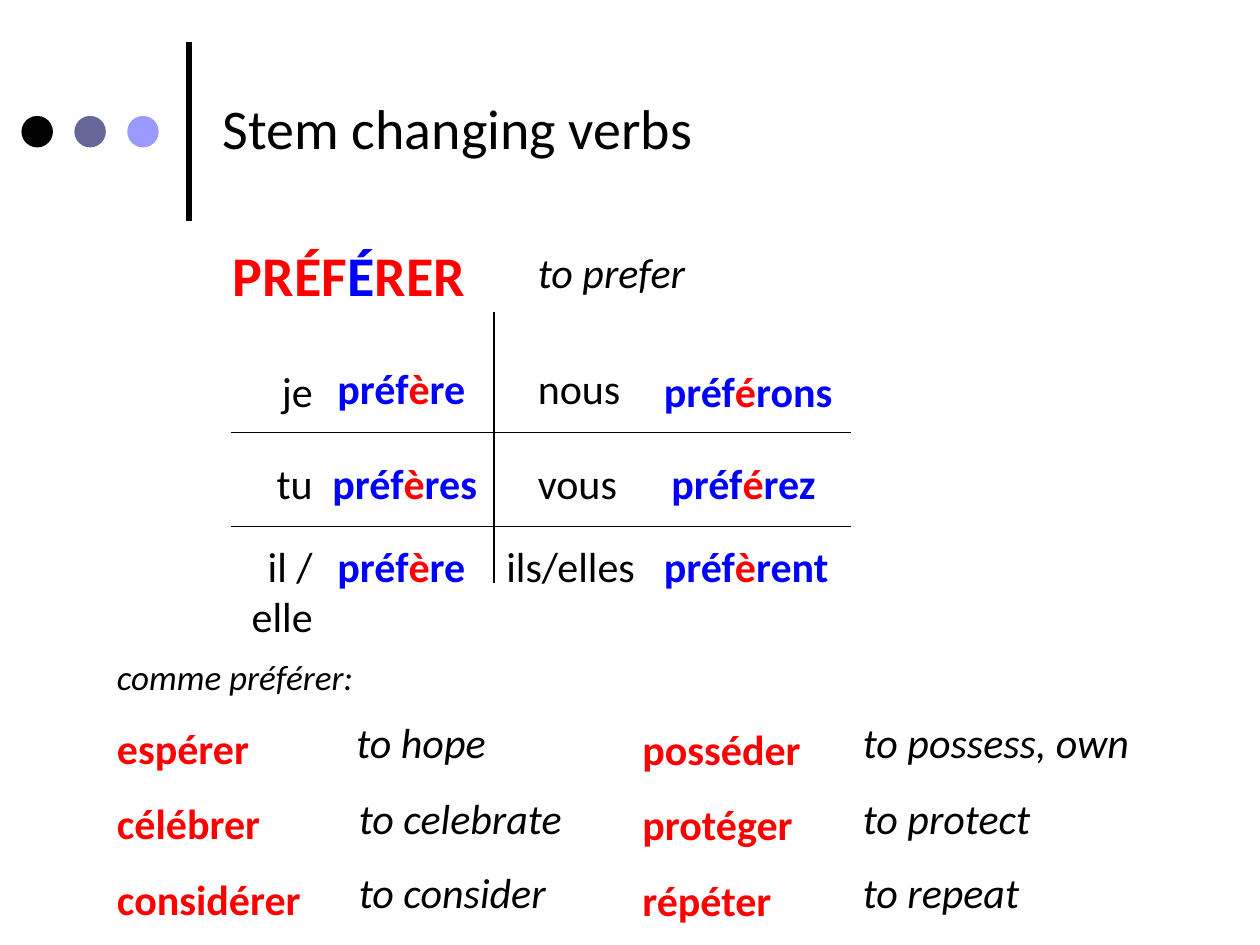
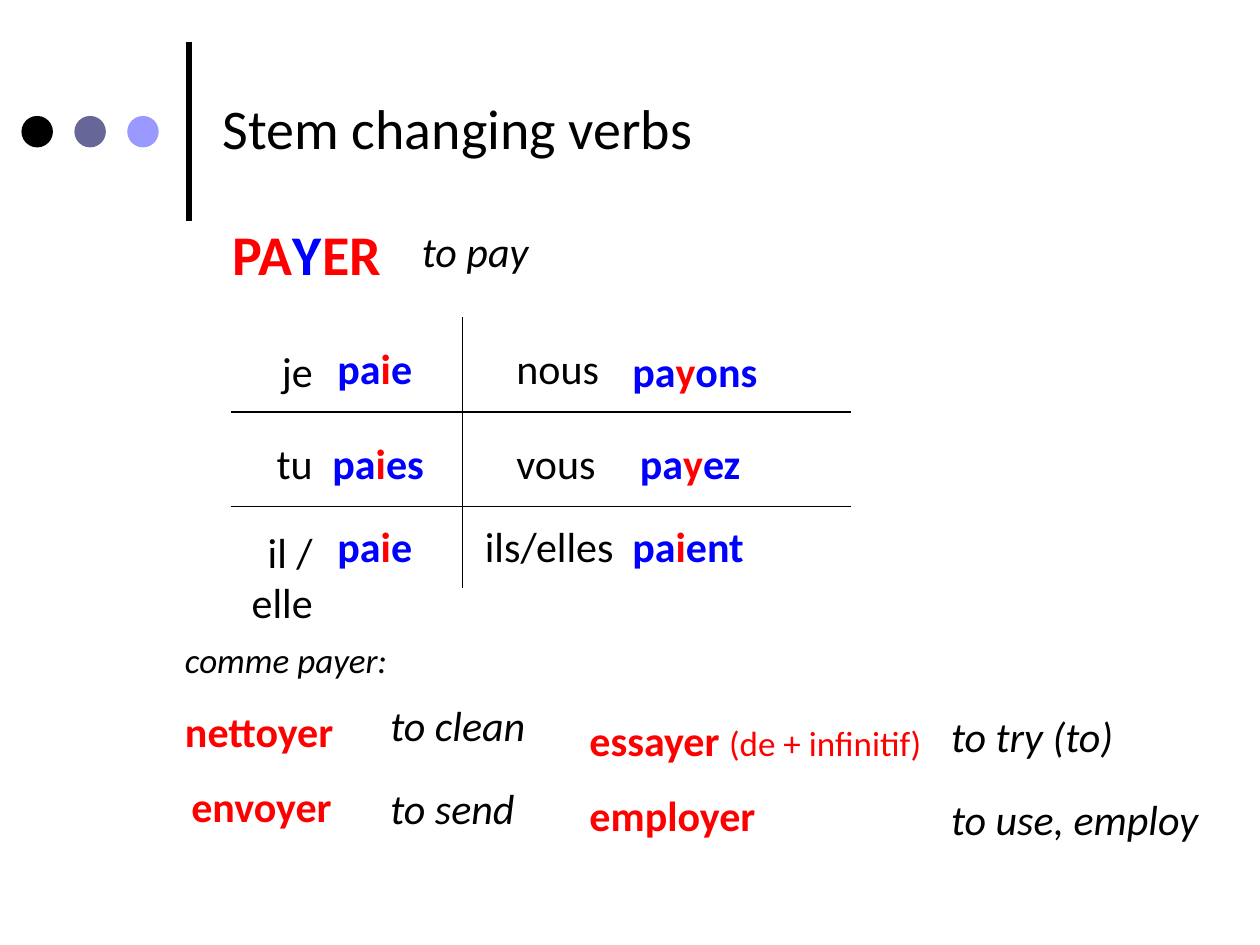
import pptx
import pptx.util
import pptx.dml.color
import pptx.enum.shapes
import pptx.enum.text
import pptx.oxml.ns
from lxml import etree

Inches, Pt = pptx.util.Inches, pptx.util.Pt
RIGHT = pptx.enum.text.PP_ALIGN.RIGHT

COLORS = {"black": "000000", "slate": "666699", "lilac": "9999FF",
          "red": "FF0000", "blue": "0000FF", "white": "FFFFFF"}
FONT = "Calibri"


def rgb(name):
    return pptx.dml.color.RGBColor.from_string(COLORS[name])


def add_line(s, x1, y1, x2, y2, weight):
    line = s.shapes.add_connector(
        pptx.enum.shapes.MSO_CONNECTOR.STRAIGHT,
        Inches(x1), Inches(y1), Inches(x2), Inches(y2))
    line.line.color.rgb = rgb("black")
    line.line.width = Pt(weight)
    etree.SubElement(line._element.spPr, pptx.oxml.ns.qn("a:effectLst"))


def add_box(s, x, y, w, h=0.51):
    tf = s.shapes.add_textbox(Inches(x), Inches(y), Inches(w), Inches(h)).text_frame
    tf.word_wrap = True
    tf.auto_size = pptx.enum.text.MSO_AUTO_SIZE.SHAPE_TO_FIT_TEXT
    return tf


def style(p, size=24, color="black", bold=False, italic=False):
    p.font.name, p.font.size = FONT, Pt(size)
    p.font.bold, p.font.italic = bold, italic
    p.font.color.rgb = rgb(color)


def add_text(s, x, y, w, text, align=None, **look):
    p = add_box(s, x, y, w).paragraphs[0]
    p.text = text
    p.alignment = align
    style(p, **look)


def add_marked(s, x, y, w, text, base, mark, size=24):
    """Write a word whose *starred* letter takes the mark colour."""
    p = add_box(s, x, y, w).paragraphs[0]
    style(p, size, base, bold=True)
    for i, part in enumerate(text.split("*")):
        r = p.add_run()
        r.text = part
        r.font.color.rgb = rgb(mark if i % 2 else base)


# Dots, bar and title shared by both slides
def add_header(s, title):
    s.background.fill.solid()
    s.background.fill.fore_color.rgb = rgb("white")
    add_line(s, 1.5, 1.75, 1.5, 0.33, 3)
    for i, color in enumerate(("black", "slate", "lilac")):
        dot = s.shapes.add_shape(
            pptx.enum.shapes.MSO_SHAPE.OVAL,
            Inches(0.17 + 0.42 * i), Inches(0.92), Inches(0.25), Inches(0.25))
        dot.shadow.inherit = False
        dot.fill.solid()
        dot.fill.fore_color.rgb = rgb(color)
        dot.line.fill.background()
    add_text(s, 1.67, 0.69, 5.17, title, size=32)


# Infinitive with its meaning
def add_infinitive(s, x, y, verb, meaning, meaning_x):
    add_marked(s, x, y, 2.62, verb, "red", "blue", size=32)
    add_text(s, meaning_x, y + 0.05, 2.08, meaning, italic=True)


# Six forms around a cross of thin lines
def add_conjugation(s, x, y, singular, plural, divider, plural_x, form_x, elle_drop=0):
    for rule_y in (y + 0.6, y + 1.35):
        add_line(s, x + 0.33, rule_y, x + 5.25, rule_y, 0.75)
    divider_x, divider_y = divider
    add_line(s, divider_x, divider_y, divider_x, divider_y + 2.15, 0.75)

    row_y = [y, y + 0.75, y + 1.41]
    drops = [0.02, 0, elle_drop]
    for pronoun, ry, drop in zip(("je", "tu", "il / elle"), row_y, drops):
        add_text(s, x, ry + drop, 1.08, pronoun, align=RIGHT)
    for form, ry, dx in zip(singular, row_y, (0, -0.04, 0)):
        add_marked(s, x + 1.08 + dx, ry, 1.62, form, "blue", "red")
    for pronoun, ry, dx in zip(("nous", "vous", "ils/elles"), row_y, (0, 0, -0.25)):
        add_text(s, plural_x + dx, ry, 1.33, pronoun)
    for form, ry, dx, drop in zip(plural, row_y, (0, 0.06, 0), (0.02, 0, 0)):
        add_marked(s, form_x + dx, ry, 2.08, form, "blue", "red")if not drop else \
            add_marked(s, form_x + dx, ry + drop, 2.08, form, "blue", "red")


# Column of verbs that follow the same pattern
def add_verbs(s, x, y, w, h, verbs, intro=None, tight_last=False):
    tf = add_box(s, x, y, w, h)
    p = tf.paragraphs[0]
    if intro:
        p.text = intro
        style(p, 20, italic=True)
        p = tf.add_paragraph()
    for i, (verb, note) in enumerate(verbs):
        if i:
            p = tf.add_paragraph()
        style(p, color="red", bold=True)
        p.line_spacing = 1.5
        r = p.add_run()
        r.text = verb
        if note:
            r.text = verb + " "
            r = p.add_run()
            r.text = note
            r.font.size, r.font.bold = Pt(20), False
    if tight_last:
        p.line_spacing = 1.0
        p.space_before = Pt(14)
        p._p.get_or_add_pPr().set("marL", str(Inches(0.05)))


def add_meanings(s, x, ys, meanings):
    for y, meaning in zip(ys, meanings):
        add_text(s, x, y, 2.47, meaning, italic=True)


def build_preferer(prs):
    s = prs.slides.add_slide(prs.slide_layouts[6])
    add_header(s, "Stem changing verbs")
    add_infinitive(s, 1.75, 1.86, "PRÉF*É*RER", "to prefer", 4.17)
    add_conjugation(s, 1.5, 2.83,
                    ("préf*è*re", "préf*è*res", "préf*è*re"),
                    ("préf*é*rons", "préf*é*rez", "préf*è*rent"),
                    divider=(3.92, 2.48), plural_x=4.17, form_x=5.17)
    add_verbs(s, 0.83, 5.15, 2.47, 2.19,
              [("espérer", ""), ("célébrer", ""), ("considérer", "")],
              intro="comme préférer:")
    add_verbs(s, 5, 5.49, 2.47, 1.93,
              [("posséder", ""), ("protéger", ""), ("répéter", "")])
    rows = (5.64, 6.24, 6.83)
    add_meanings(s, 2.73, rows[:1], ["to hope"])
    add_meanings(s, 2.75, rows[1:], ["to celebrate", "to consider"])
    add_meanings(s, 6.75, rows, ["to possess, own", "to protect", "to repeat"])


def build_payer(prs):
    s = prs.slides.add_slide(prs.slide_layouts[6])
    add_header(s, "Stem changing verbs")
    add_infinitive(s, 1.75, 1.69, "PA*Y*ER", "to pay", 3.25)
    add_conjugation(s, 1.5, 2.67,
                    ("pa*i*e", "pa*i*es", "pa*i*e"),
                    ("pa*y*ons", "pa*y*ez", "pa*i*ent"),
                    divider=(3.67, 2.52), plural_x=4, form_x=4.92, elle_drop=0.05)
    add_verbs(s, 1.37, 5.02, 2.47, 1.65, [("nettoyer", ""), ("envoyer", "")],
              intro="comme payer:", tight_last=True)
    add_verbs(s, 4.58, 5.42, 3.08, 1.25,
              [("essayer", "(de + infinitif)"), ("employer", "")])
    add_meanings(s, 3, (5.5, 6.16), ["to clean", "to send"])
    add_meanings(s, 7.45, (5.59, 6.25), ["to try (to)", "to use, employ"])


def main():
    prs = pptx.Presentation()
    prs.slide_width, prs.slide_height = Inches(10), Inches(7.5)
    build_preferer(prs)
    build_payer(prs)
    prs.save("out.pptx")


if __name__ == "__main__":
    main()
